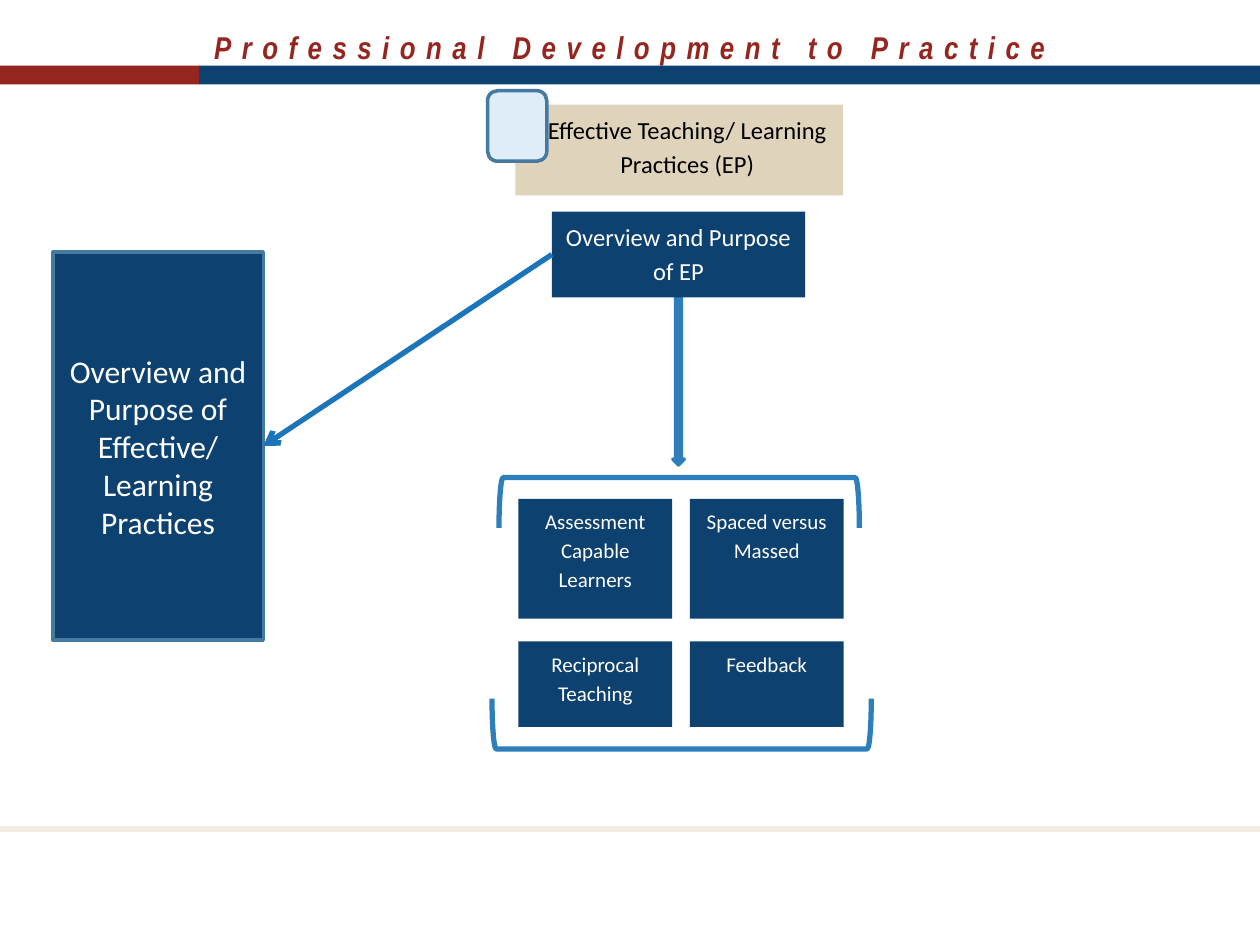
from dataclasses import dataclass

from lxml import etree
from pptx import Presentation
from pptx import util as u
from pptx.dml.color import RGBColor
from pptx.enum import shapes, text
from pptx.oxml import ns

KIND = shapes.MSO_SHAPE
TOP, MID = text.MSO_ANCHOR.TOP, text.MSO_ANCHOR.MIDDLE


@dataclass(frozen=True)
class Theme:
    navy: str = "0D4170"
    red: str = "95261F"
    blue: str = "2D7EBA"
    link: str = "1C75BB"
    edge: str = "4479A0"
    pale: str = "DEEDF7"
    sand: str = "DFD4BB"
    rule: str = "F2EDE2"
    white: str = "FFFFFF"
    black: str = "000000"
    head: str = "Arial Narrow"
    body: str = "Calibri"
    big: int = 18
    mid: int = 14
    small: int = 12


def write(shape, words, size, color, font, anchor=TOP, bold=False,
          slant=False, track=0, lead=None, after=0, indent=0):
    """Fill a shape with one centred, formatted paragraph."""
    frame = shape.text_frame
    frame.word_wrap = True
    frame.auto_size = text.MSO_AUTO_SIZE.NONE
    frame.vertical_anchor = anchor
    para = frame.paragraphs[0]
    para.alignment = text.PP_ALIGN.CENTER
    para.space_before, para.space_after = u.Pt(0), u.Pt(after)
    if lead:
        para.line_spacing = lead
    if indent:
        para._p.get_or_add_pPr().set("marL", str(u.Inches(indent)))
    run = para.add_run()
    run.text = words
    run.font.size, run.font.name = u.Pt(size), font
    run.font.bold, run.font.italic = bold, slant
    run.font.color.rgb = RGBColor.from_string(color)
    if track:
        run._r.get_or_add_rPr().set("spc", str(track * 100))


class Board:
    """Draws on one slide, on a grid of 100 columns by 75 rows."""

    def __init__(self, deck, theme):
        self.theme = theme
        self.slide = deck.slides.add_slide(deck.slide_layouts[5])
        self.col = deck.slide_width / 100
        self.row = deck.slide_height / 75

    def place(self, x, y, w, h):
        return (int(x * self.col), int(y * self.row),
                int(w * self.col), int(h * self.row))

    def title(self, words, area):
        box = self.slide.shapes.title
        box.left, box.top, box.width, box.height = self.place(*area)
        write(box, words, self.theme.big, self.theme.red, self.theme.head,
              bold=True, slant=True, track=6)

    def shape(self, area, fill=None, line=None, width=2, kind=KIND.RECTANGLE, turn=0):
        item = self.slide.shapes.add_shape(kind, *self.place(*area))
        item.shadow.inherit = False
        item.rotation = turn
        if fill:
            item.fill.solid()
            item.fill.fore_color.rgb = RGBColor.from_string(fill)
        else:
            item.fill.background()
        if line:
            item.line.color.rgb = RGBColor.from_string(line)
            item.line.width = u.Pt(width)
        else:
            item.line.fill.background()
        return item

    def label(self, area, words, size, fill=None, color=None, indent=0):
        item = self.shape(area, fill or self.theme.navy)
        write(item, words, size, color or self.theme.white, self.theme.body,
              lead=1.15, after=7, indent=indent)
        return item

    def line(self, start, end, color, width=3, arrow=False):
        item = self.slide.shapes.add_connector(
            shapes.MSO_CONNECTOR.STRAIGHT, *self.place(*start, *end))
        item.line.color.rgb = RGBColor.from_string(color)
        item.line.width = u.Pt(width)
        if arrow:
            tip = etree.SubElement(item.line._get_or_add_ln(), ns.qn("a:tailEnd"))
            tip.set("type", "arrow")
        etree.SubElement(item._element.spPr, ns.qn("a:effectLst"))
        return item


def main():
    deck = Presentation()
    deck.slide_width, deck.slide_height = u.Inches(10), u.Inches(7.5)
    look = Theme()
    board = Board(deck, look)

    # Header band and footer rule
    board.title("Professional Development to Practice", (0, 1.7, 100, 4))
    split = 15.8
    board.shape((0, 5.2, split, 1.5), look.red)
    board.shape((split, 5.2, 100 - split, 1.5), look.navy)
    board.line((0, 65.8), (100, 65.8), look.rule)

    # Side panel
    panel = board.shape((4.2, 20, 16.7, 30.8), look.navy, look.edge)
    write(panel, "Overview and Purpose of Effective/ Learning Practices",
          look.big, look.white, look.body, anchor=MID)

    # Topic and its overview
    board.shape((53.4, 17.5, 0.9, 19.4), look.blue, look.blue, kind=KIND.DOWN_ARROW)
    goal = board.label((43.8, 16.8, 20.1, 6.8), "Overview and Purpose of EP", look.mid)
    board.label((40.9, 8.3, 26, 7.2), "Effective Teaching/ Learning Practices (EP)",
                look.mid, look.sand, look.black, indent=0.13)
    link = board.line((43.8, 20.2), (20.9, 35.4), look.link, arrow=True)
    link.begin_connect(goal, 1)
    link.end_connect(panel, 3)

    # Practices, two by two
    rows = [(39.6, 9.5, ["Assessment Capable Learners", "Spaced versus Massed"]),
            (50.9, 6.8, ["Reciprocal Teaching", "Feedback"])]
    for y, high, names in rows:
        for i, name in enumerate(names):
            board.label((41.15 + 13.6 * i, y, 12.2, high), name, look.small)

    # Brackets around the practices
    for area, turn in [((51.9, 25.6, 4, 28.6), 90), ((52.1, 42.4, 4, 30.1), 270)]:
        board.shape(area, line=look.blue, width=3, kind=KIND.LEFT_BRACKET, turn=turn)

    # Corner marker
    board.shape((38.7, 7.2, 4.7, 5.6), look.pale, look.edge, kind=KIND.ROUNDED_RECTANGLE)

    deck.save("out.pptx")


if __name__ == "__main__":
    main()
